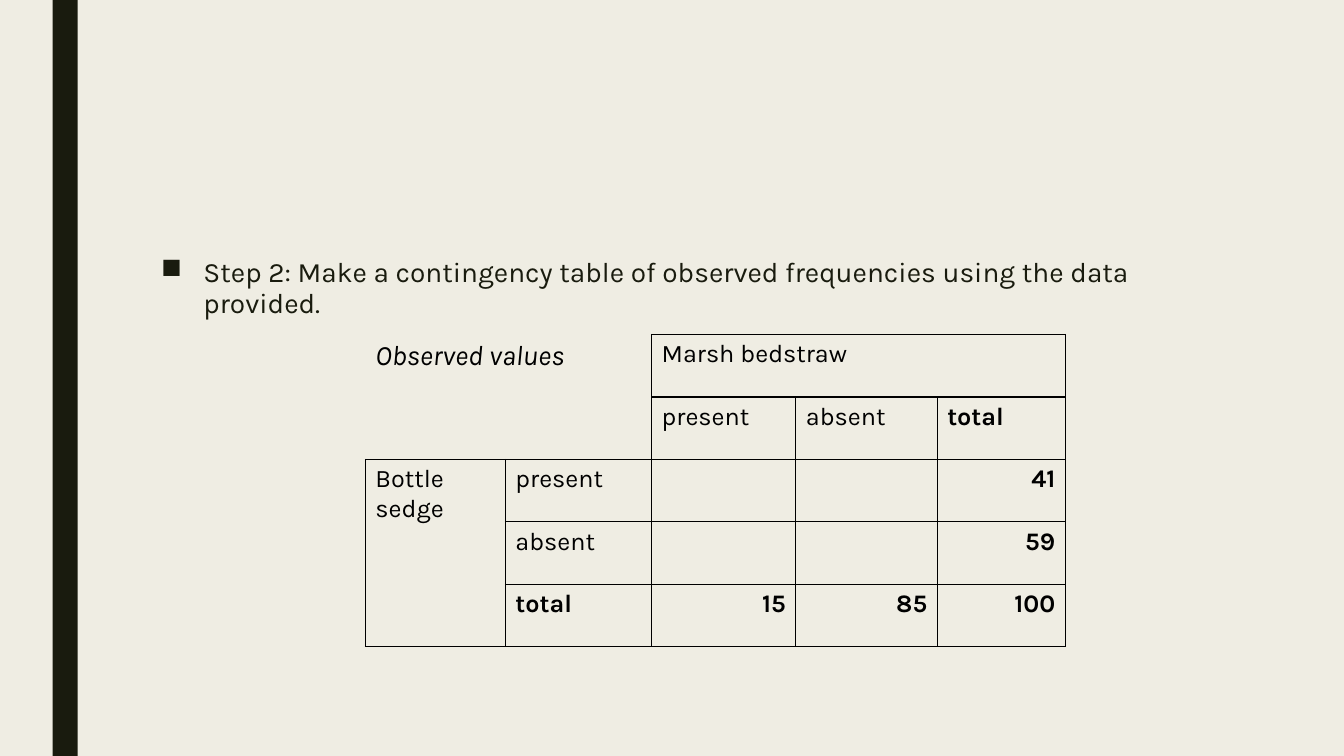
import pptx
import pptx.util
import pptx.dml.color
import pptx.enum.shapes
import pptx.enum.text
import pptx.oxml
import pptx.oxml.ns

Pt = pptx.util.Pt
COLORS = {"background": "EFEDE3", "dark": "191B0E", "black": "000000"}
COL_WIDTHS = [100, 104.5, 103, 101, 91.5]
ROWS = [
    ["Observed values", "", "Marsh bedstraw", "", ""],
    ["", "", "present", "absent", "total"],
    ["Bottle sedge", "present", "", "", "41"],
    ["", "absent", "", "", "59"],
    ["", "total", "15", "85", "100"],
]
MERGES = [((0, 0), (1, 1)), ((0, 2), (0, 4)), ((2, 0), (4, 0))]


def rgb(name):
    """Return the named colour."""
    return pptx.dml.color.RGBColor.from_string(COLORS[name])


def add_run(p, text, size, color, bold=False, italic=False):
    """Add one formatted run to a paragraph."""
    r = p.add_run()
    r.text = text
    r.font.name = "Karla"
    r.font.size = Pt(size)
    r.font.bold = bold
    r.font.italic = italic
    r.font.color.rgb = rgb(color)


def add_side_bar(slide, left, top, width, height):
    """Draw the dark vertical bar."""
    sp = slide.shapes.add_shape(pptx.enum.shapes.MSO_SHAPE.RECTANGLE,
                                Pt(left), Pt(top), Pt(width), Pt(height))
    sp.shadow.inherit = False
    sp.fill.solid()
    sp.fill.fore_color.rgb = rgb("dark")
    sp.line.fill.background()


def add_step(slide, left, top, width, height):
    """Write the bulleted instruction."""
    tf = slide.shapes.add_textbox(Pt(left), Pt(top), Pt(width), Pt(height)).text_frame
    tf.word_wrap = True
    p = tf.paragraphs[0]
    p.line_spacing = 0.94
    p.space_before = Pt(10)
    p.space_after = Pt(2)
    pPr = p._p.get_or_add_pPr()
    pPr.set("marL", str(Pt(30.24)))
    pPr.set("indent", str(-Pt(30.24)))
    pPr.append(pptx.oxml.parse_xml(
        f'<a:buChar {pptx.oxml.ns.nsdecls("a")} char="■"/>'))
    add_run(p, "Step 2: Make a contingency table of observed frequencies "
               "using the data provided.", 20, "dark")


def set_borders(cell, visible):
    """Draw the visible sides of a cell and hide the others."""
    tcPr = cell._tc.get_or_add_tcPr()
    for i, side in enumerate("LRTB"):
        fill = (f'<a:solidFill><a:srgbClr val="{COLORS["black"]}"/></a:solidFill>'
                if side in visible else "<a:noFill/>")
        tcPr.insert(i, pptx.oxml.parse_xml(
            f'<a:ln{side} {pptx.oxml.ns.nsdecls("a")} w="{Pt(1)}">{fill}</a:ln{side}>'))


def add_contingency_table(slide, left, top, width, height):
    """Build the table of observed frequencies."""
    table = slide.shapes.add_table(len(ROWS), len(COL_WIDTHS), Pt(left), Pt(top),
                                   Pt(width), Pt(height)).table
    table.first_row = False
    table.horz_banding = False
    for column, share in zip(table.columns, COL_WIDTHS):
        column.width = Pt(width * share / sum(COL_WIDTHS))
    for row in table.rows:
        row.height = Pt(height / len(ROWS))
    for first, last in MERGES:
        table.cell(*first).merge(table.cell(*last))
    for i, texts in enumerate(ROWS):
        for j, text in enumerate(texts):
            cell = table.cell(i, j)
            cell.fill.background()
            set_borders(cell, "RB" if i < 2 and j < 2 else "LRTB")
            if not text:
                continue
            p = cell.text_frame.paragraphs[0]
            corner = i == j == 0
            number = text.isdigit()
            if number:
                p.alignment = pptx.enum.text.PP_ALIGN.RIGHT
            add_run(p, text, 20 if corner else 18, "black",
                    bold=number or text == "total", italic=corner)


def main():
    """Build and save the slide."""
    prs = pptx.Presentation()
    prs.slide_width = Pt(960)
    prs.slide_height = Pt(540)
    slide = prs.slides.add_slide(prs.slide_layouts[6])
    slide.background.fill.solid()
    slide.background.fill.fore_color.rgb = rgb("background")
    add_side_bar(slide, 37.5, 0, 18, 540)
    add_step(slide, 108, 180, 756, 282)
    add_contingency_table(slide, 261, 239, 500, 223)
    prs.save("out.pptx")


if __name__ == "__main__":
    main()
